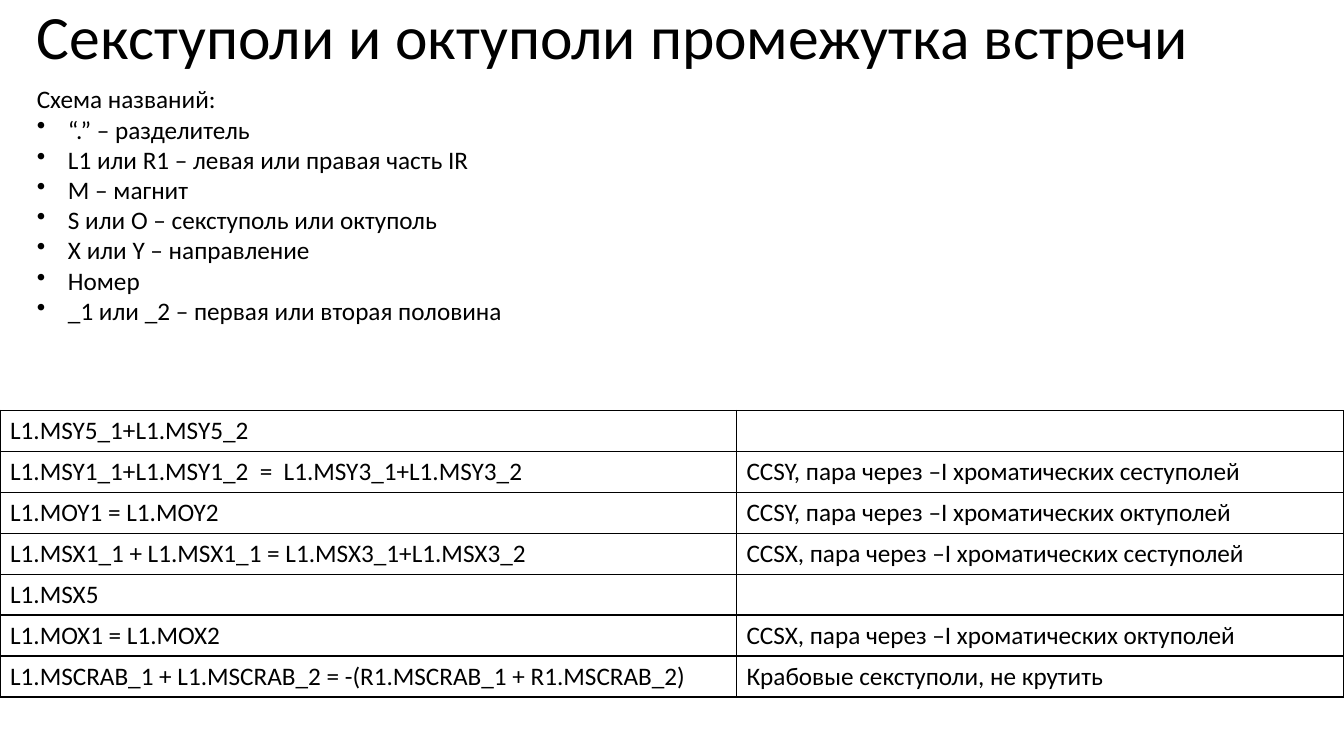
"""Build the slide on sextupoles and octupoles of the interaction region."""
from dataclasses import dataclass

from lxml import etree
from pptx import Presentation
from pptx import util as u
from pptx.dml.color import RGBColor
from pptx.enum import text
from pptx.oxml import ns


@dataclass(frozen=True)
class Theme:
    """Colours, font and sizes of the slide."""
    ink: str = "000000"
    paper: str = "FFFFFF"
    font: str = "Calibri"
    title_size: int = 44
    body_size: int = 18
    border: float = 1
    indent: float = 0.31


class Deck:
    """Draws elements on one slide, placed by shares of its size."""

    def __init__(self, theme):
        """Open a title-only slide."""
        self.theme = theme
        self.prs = Presentation()
        self.prs.slide_width, self.prs.slide_height = u.Inches(13.33), u.Inches(7.5)
        self.s = self.prs.slides.add_slide(self.prs.slide_layouts[5])
        fill = self.s.background.fill
        fill.solid()
        fill.fore_color.rgb = RGBColor.from_string(theme.paper)

    def box(self, x, y, w, h):
        """Turn shares of the slide into lengths."""
        width, height = self.prs.slide_width, self.prs.slide_height
        return [u.Emu(round(v)) for v in (x * width, y * height, w * width, h * height)]

    def style(self, p, size):
        """Format a paragraph."""
        p.alignment = text.PP_ALIGN.LEFT
        p.font.name = self.theme.font
        p.font.size = u.Pt(size)
        p.font.color.rgb = RGBColor.from_string(self.theme.ink)

    def title(self, wording, *place):
        """Fill and move the title placeholder."""
        sp = self.s.shapes.title
        sp.left, sp.top, sp.width, sp.height = self.box(*place)
        tf = sp.text_frame
        tf.text = wording
        tf.auto_size = text.MSO_AUTO_SIZE.NONE
        tf.vertical_anchor = text.MSO_ANCHOR.MIDDLE
        p = tf.paragraphs[0]
        p.line_spacing = 0.9
        self.style(p, self.theme.title_size)

    def bullets(self, heading, items, *place):
        """Add a heading with a bulleted list below it."""
        tf = self.s.shapes.add_textbox(*self.box(*place)).text_frame
        tf.word_wrap = False
        tf.auto_size = text.MSO_AUTO_SIZE.SHAPE_TO_FIT_TEXT
        tf.text = "\n".join([heading, *items])
        for p in tf.paragraphs:
            self.style(p, self.theme.body_size)
        indent = u.Inches(self.theme.indent)
        for p in tf.paragraphs[1:]:
            pPr = p._p.get_or_add_pPr()
            pPr.set("marL", str(indent))
            pPr.set("indent", str(-indent))
            bullet = etree.Element(ns.qn("a:buChar"), char="•")
            pPr.insert_element_before(bullet, "a:tabLst", "a:defRPr", "a:extLst")

    def table(self, rows, shares, *place):
        """Add a plain table with thin borders."""
        x, y, w, h = self.box(*place)
        table = self.s.shapes.add_table(len(rows), len(shares), x, y, w, h).table
        table.first_row = table.horz_banding = False
        for column, share in zip(table.columns, shares):
            column.width = u.Emu(round(w * share))
        for r, row in enumerate(rows):
            for c, wording in enumerate(row):
                cell = table.cell(r, c)
                cell.text = wording
                cell.fill.background()
                self.style(cell.text_frame.paragraphs[0], self.theme.body_size)
                self.borders(cell)

    def borders(self, cell):
        """Draw all four borders of a cell."""
        tcPr = cell._tc.get_or_add_tcPr()
        for i, side in enumerate("LRTB"):
            ln = etree.Element(ns.qn(f"a:ln{side}"), w=str(u.Pt(self.theme.border)))
            fill = etree.SubElement(ln, ns.qn("a:solidFill"))
            etree.SubElement(fill, ns.qn("a:srgbClr"), val=self.theme.ink)
            tcPr.insert(i, ln)


NAMING = [
    "“.” – разделитель",
    "L1 или R1 – левая или правая часть IR",
    "M – магнит",
    "S или O – секступоль или октуполь",
    "X или Y – направление",
    "Номер",
    "_1 или _2 – первая или вторая половина",
]
MAGNETS = [
    ("L1.MSY5_1+L1.MSY5_2", ""),
    ("L1.MSY1_1+L1.MSY1_2  =  L1.MSY3_1+L1.MSY3_2",
     "CCSY, пара через –I хроматических сеступолей"),
    ("L1.MOY1 = L1.MOY2", "CCSY, пара через –I хроматических октуполей"),
    ("L1.MSX1_1 + L1.MSX1_1 = L1.MSX3_1+L1.MSX3_2",
     "CCSX, пара через –I хроматических сеступолей"),
    ("L1.MSX5", ""),
    ("L1.MOX1 = L1.MOX2", "CCSX, пара через –I хроматических октуполей"),
    ("L1.MSCRAB_1 + L1.MSCRAB_2 = -(R1.MSCRAB_1 + R1.MSCRAB_2)",
     "Крабовые секступоли, не крутить"),
]


def main():
    """Build and save the slide."""
    deck = Deck(Theme())
    left = 0.02
    deck.title("Секступоли и октуполи промежутка встречи", left, 0, 0.96, 0.105)
    deck.table(MAGNETS, (0.548, 0.452), 0, 0.543, 1, 0.379)
    deck.bullets("Схема названий:", NAMING, left, 0.104, 0.365, 0.336)
    deck.prs.save("out.pptx")


if __name__ == "__main__":
    main()
